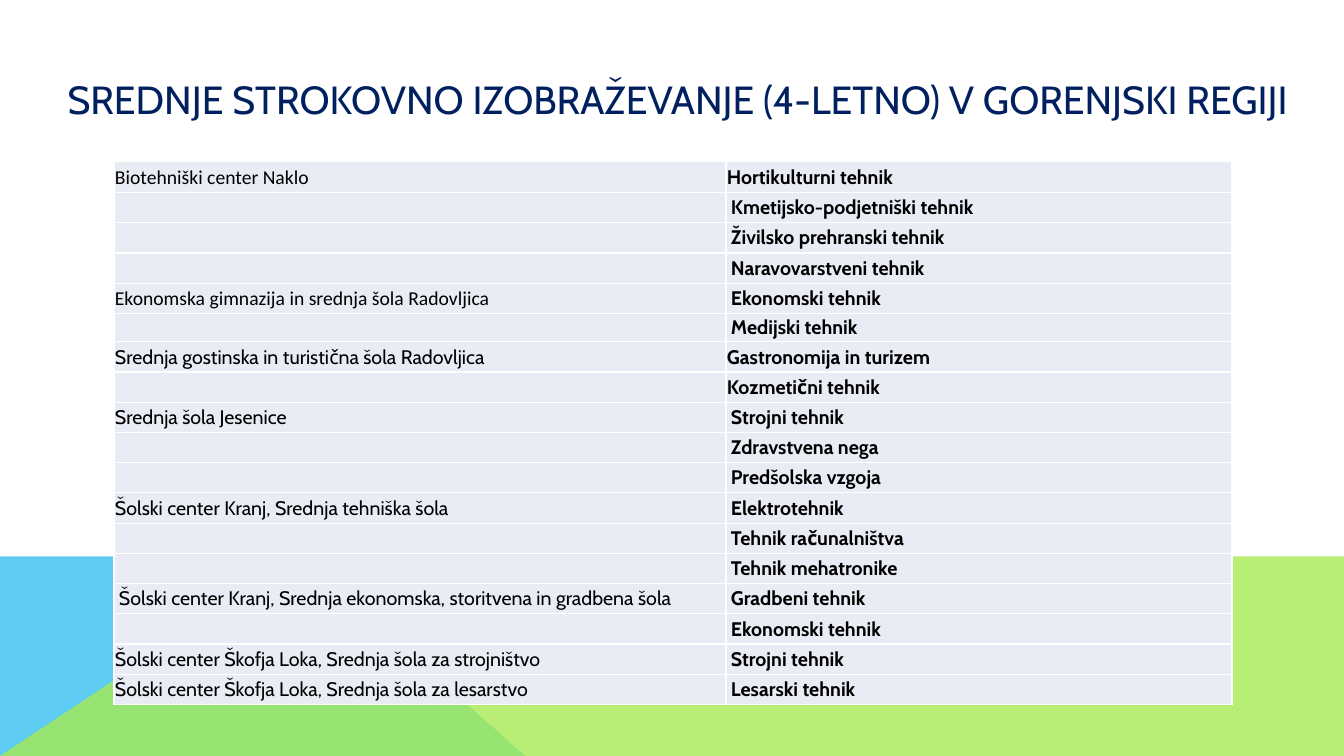
from collections import namedtuple
from dataclasses import dataclass

from lxml import etree
from pptx import Presentation
from pptx.dml.color import RGBColor
from pptx.enum import text
from pptx.oxml import ns
from pptx.util import Pt

PX = 9144  # 100 px to the inch
Box = namedtuple("Box", "left top width height")


@dataclass(frozen=True)
class Theme:
    navy: str = "002060"
    ink: str = "000000"
    cell: str = "E9EBF5"
    rule: str = "FFFFFF"
    sky: str = "5ECCF3"
    lime: str = "A7EA52"
    font: str = "Cabin"
    alt_font: str = "Calibri"
    title_size: int = 28
    table_size: int = 14


THEME = Theme()
TITLE = "SREDNJE STROKOVNO IZOBRAŽEVANJE (4-LETNO) V GORENJSKI REGIJI"
FLUSH, INDENTED = 1, 5  # left and right cell insets
COLUMNS = (607, 502)
ROW, FIRST_ROW, MEDIA_ROW = 30, 31, 28

# School, its font, its inset, its programmes
SCHOOLS = [
    ("Biotehniški center Naklo", THEME.alt_font, FLUSH,
     ["Hortikulturni tehnik", "Kmetijsko-podjetniški tehnik",
      "Živilsko prehranski tehnik", "Naravovarstveni tehnik"]),
    ("Ekonomska gimnazija in srednja šola Radovljica", THEME.alt_font, FLUSH,
     ["Ekonomski tehnik", "Medijski tehnik"]),
    ("Srednja gostinska in turistična šola Radovljica", THEME.font, FLUSH,
     ["Gastronomija in turizem", "Kozmetični tehnik"]),
    ("Srednja šola Jesenice", THEME.font, FLUSH,
     ["Strojni tehnik", "Zdravstvena nega", "Predšolska vzgoja"]),
    ("Šolski center Kranj, Srednja tehniška šola", THEME.font, FLUSH,
     ["Elektrotehnik", "Tehnik računalništva", "Tehnik mehatronike"]),
    ("Šolski center Kranj, Srednja ekonomska, storitvena in gradbena šola",
     THEME.font, INDENTED, ["Gradbeni tehnik", "Ekonomski tehnik"]),
    ("Šolski center Škofja Loka, Srednja šola za strojništvo", THEME.font, FLUSH,
     ["Strojni tehnik"]),
    ("Šolski center Škofja Loka, Srednja šola za lesarstvo", THEME.font, FLUSH,
     ["Lesarski tehnik"]),
]
FLUSH_PROGRAMMES = {"Hortikulturni tehnik", "Gastronomija in turizem",
                    "Kozmetični tehnik"}


def style_run(run, font, size, color, bold=False):
    run.font.name = font
    run.font.size = Pt(size)
    run.font.bold = bold
    run.font.color.rgb = RGBColor.from_string(color)


def add_panel(slide, box, points, color, opacity=100):
    """Borderless polygon; points are relative to the box."""
    corners = [(box.left + x, box.top + y) for x, y in points]
    builder = slide.shapes.build_freeform(*corners[0], scale=PX)
    builder.add_line_segments(corners[1:], close=True)
    panel = builder.convert_to_shape()
    panel.shadow.inherit = False
    panel.line.fill.background()
    panel.fill.solid()
    panel.fill.fore_color.rgb = RGBColor.from_string(color)
    if opacity < 100:
        tint = panel.fill._xPr.find(ns.qn("a:solidFill"))[0]
        etree.SubElement(tint, ns.qn("a:alpha")).set("val", str(opacity * 1000))


def add_backdrop(slide, box):
    fold = 298  # where the two panels meet at the top
    add_panel(slide, box,
              [(0, box.height), (0, 0), (fold, 0), (521, box.height)], THEME.sky)
    add_panel(slide, box,
              [(0, box.height), (fold, 0), (box.width, 0), (box.width, box.height)],
              THEME.lime, opacity=80)


def place_title(slide, box):
    title = slide.shapes.title
    title.left, title.top, title.width, title.height = (n * PX for n in box)
    frame = title.text_frame
    frame.text = TITLE
    frame.word_wrap = True
    frame.auto_size = text.MSO_AUTO_SIZE.NONE
    frame.vertical_anchor = text.MSO_ANCHOR.MIDDLE
    heading = frame.paragraphs[0]
    heading.alignment = text.PP_ALIGN.LEFT
    style_run(heading.runs[0], THEME.font, THEME.title_size, THEME.navy)


def add_borders(cell):
    properties = cell._tc.get_or_add_tcPr()
    for side in ("lnL", "lnR", "lnT", "lnB"):
        edge = etree.SubElement(properties, ns.qn("a:" + side), w=str(Pt(1)))
        fill = etree.SubElement(edge, ns.qn("a:solidFill"))
        etree.SubElement(fill, ns.qn("a:srgbClr"), val=THEME.rule)


def fill_cell(cell, words, font, inset, bold=False):
    add_borders(cell)
    cell.fill.solid()
    cell.fill.fore_color.rgb = RGBColor.from_string(THEME.cell)
    cell.vertical_anchor = text.MSO_ANCHOR.MIDDLE
    cell.margin_left = cell.margin_right = inset * PX
    cell.margin_top = PX if inset == FLUSH else 0
    cell.margin_bottom = 0
    line = cell.text_frame.paragraphs[0]
    if words:
        line.text = words
        style_run(line.runs[0], font, THEME.table_size, THEME.ink, bold)
    else:  # keeps an empty row from growing
        etree.SubElement(line._p, ns.qn("a:endParaRPr"),
                         sz=str(THEME.table_size * 100))


def add_school_table(slide, box):
    rows = [(school if i == 0 else "", font, inset, programme)
            for school, font, inset, programmes in SCHOOLS
            for i, programme in enumerate(programmes)]
    table = slide.shapes.add_table(len(rows), len(COLUMNS),
                                   *(n * PX for n in box)).table
    table.first_row = table.horz_banding = False
    for column, width in zip(table.columns, COLUMNS):
        column.width = width * PX
    heights = {"Hortikulturni tehnik": FIRST_ROW, "Medijski tehnik": MEDIA_ROW}
    for r, (school, font, inset, programme) in enumerate(rows):
        table.rows[r].height = heights.get(programme, ROW) * PX
        fill_cell(table.cell(r, 0), school, font, inset)
        fill_cell(table.cell(r, 1), programme, THEME.font,
                  FLUSH if programme in FLUSH_PROGRAMMES else INDENTED, bold=True)


def main():
    deck = Presentation()
    deck.slide_width, deck.slide_height = 1333 * PX, 750 * PX
    slide = deck.slides.add_slide(deck.slide_layouts[5])  # Title Only
    add_backdrop(slide, Box(0, 552, 1333, 198))
    place_title(slide, Box(57, -36, 1263, 268))
    add_school_table(slide, Box(113, 160, sum(COLUMNS), 541))
    deck.save("out.pptx")


if __name__ == "__main__":
    main()
